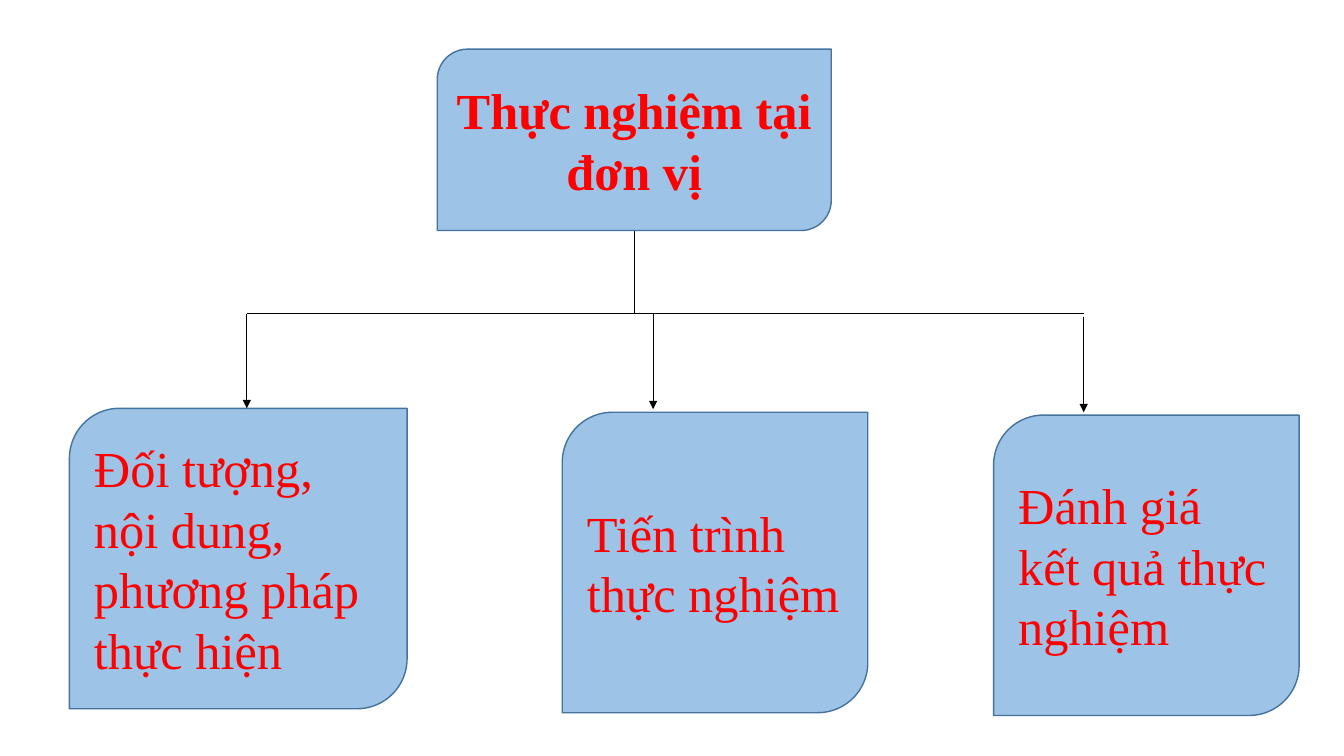
"""Build a slide charting the three parts of the unit experiment."""
from dataclasses import dataclass

from lxml.etree import SubElement
from pptx import Presentation
from pptx.dml.color import RGBColor
from pptx.enum.shapes import MSO_CONNECTOR, MSO_SHAPE
from pptx.enum.text import MSO_ANCHOR, PP_ALIGN
from pptx.oxml.ns import qn
from pptx.shapes.autoshape import Shape
from pptx.shapes.shapetree import SlideShapes
from pptx.text.text import TextFrame
from pptx.util import Cm, Pt

BRANCH_TOP = 7.9
BRANCH_HEIGHT = 7.57


@dataclass(frozen=True)
class Topic:
    text: str
    left: float
    top: float
    width: float
    height: float = BRANCH_HEIGHT


@dataclass(frozen=True)
class Link:
    x1: float
    y1: float
    x2: float
    y2: float
    arrow: bool = False


ROOT = Topic("Thực nghiệm tại đơn vị", 11.02, 1.24, 9.93, 4.57)
BRANCHES = [
    Topic("Đối tượng, nội dung, phương pháp thực hiện", 1.75, 10.29, 8.51),
    Topic("Tiến trình thực nghiệm", 14.17, 10.39, 7.7),
    Topic("Đánh giá kết quả thực nghiệm", 25.04, 10.46, 7.7),
]
LINKS = [
    Link(15.98, ROOT.top + ROOT.height, 15.98, BRANCH_TOP),
    Link(6.22, BRANCH_TOP, 27.31, BRANCH_TOP),
    Link(6.22, BRANCH_TOP, 6.22, 10.29, arrow=True),
    Link(16.46, BRANCH_TOP, 16.46, 10.31, arrow=True),
    Link(27.31, 7.98, 27.31, 10.39, arrow=True),
]


def color(value: str) -> RGBColor:
    """Turn a hex string into a colour."""
    return RGBColor.from_string(value)


def write(frame: TextFrame, text: str, *, bold: bool = False,
          align: PP_ALIGN = PP_ALIGN.LEFT) -> None:
    """Put formatted text in a frame."""
    frame.word_wrap = True
    frame.vertical_anchor = MSO_ANCHOR.MIDDLE
    paragraph = frame.paragraphs[0]
    paragraph.alignment = align
    run = paragraph.add_run()
    run.text = text
    run.font.name = "Times New Roman"
    run.font.size = Pt(36)
    run.font.bold = bold
    run.font.color.rgb = color("FF0000")


def draw_topic(shapes: SlideShapes, topic: Topic) -> Shape:
    """Draw the box of a topic."""
    box = shapes.add_shape(MSO_SHAPE.ROUND_2_DIAG_RECTANGLE, Cm(topic.left),
                           Cm(topic.top), Cm(topic.width), Cm(topic.height))
    box.shadow.inherit = False
    box.fill.solid()
    box.fill.fore_color.rgb = color("9DC3E6")
    box.line.color.rgb = color("43739E")
    box.line.width = Pt(1)
    return box


def draw_link(shapes: SlideShapes, link: Link) -> None:
    """Draw a line of the tree, with an arrowhead if asked."""
    line = shapes.add_connector(MSO_CONNECTOR.STRAIGHT, Cm(link.x1), Cm(link.y1),
                                Cm(link.x2), Cm(link.y2))
    line.line.color.rgb = color("000000")
    line.line.width = Pt(0.5)
    if link.arrow:
        SubElement(line.line._get_or_add_ln(), qn("a:tailEnd"), type="triangle")
    SubElement(line._element.spPr, qn("a:effectLst"))


def main() -> None:
    """Draw the tree and save the deck."""
    deck = Presentation()
    deck.slide_width, deck.slide_height = Cm(33.87), Cm(19.05)
    shapes = deck.slides.add_slide(deck.slide_layouts[6]).shapes
    root = draw_topic(shapes, ROOT)
    write(root.text_frame, ROOT.text, bold=True, align=PP_ALIGN.CENTER)
    for branch in BRANCHES:
        write(draw_topic(shapes, branch).text_frame, branch.text)
    for link in LINKS:
        draw_link(shapes, link)
    deck.save("out.pptx")


if __name__ == "__main__":
    main()
